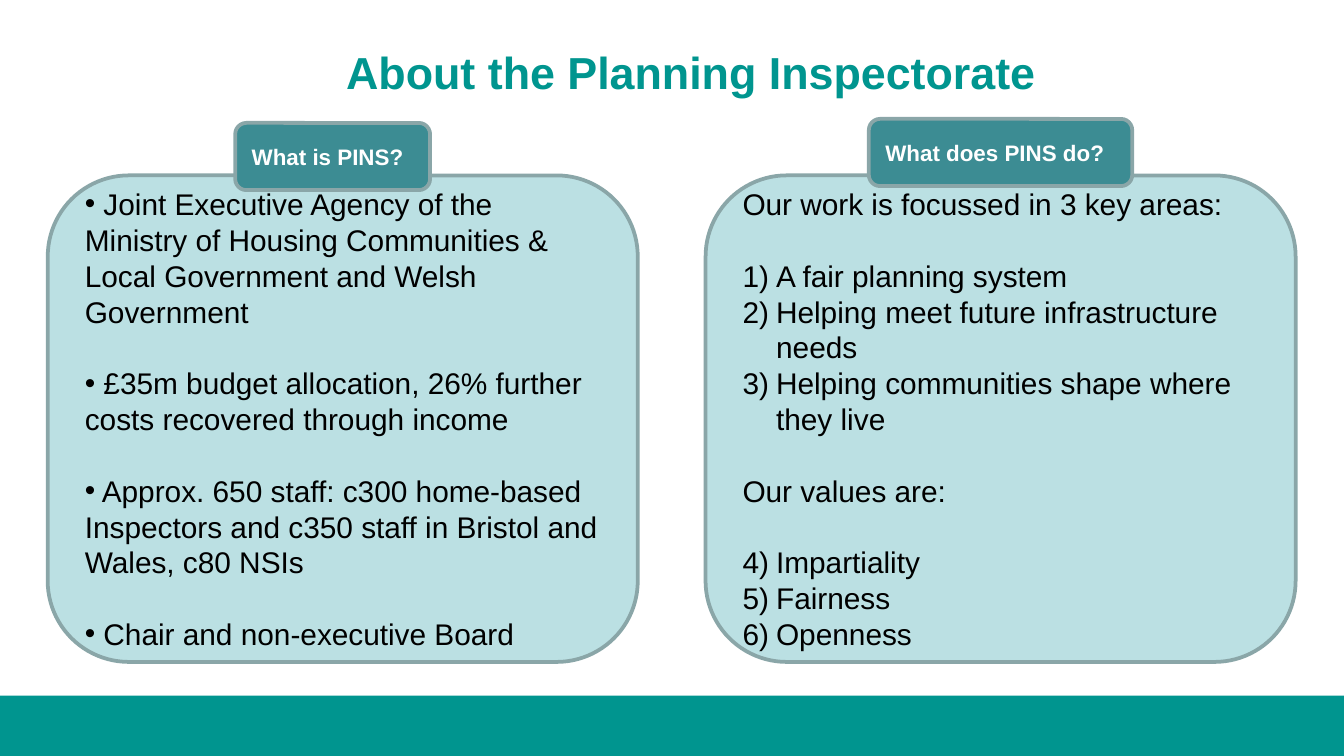
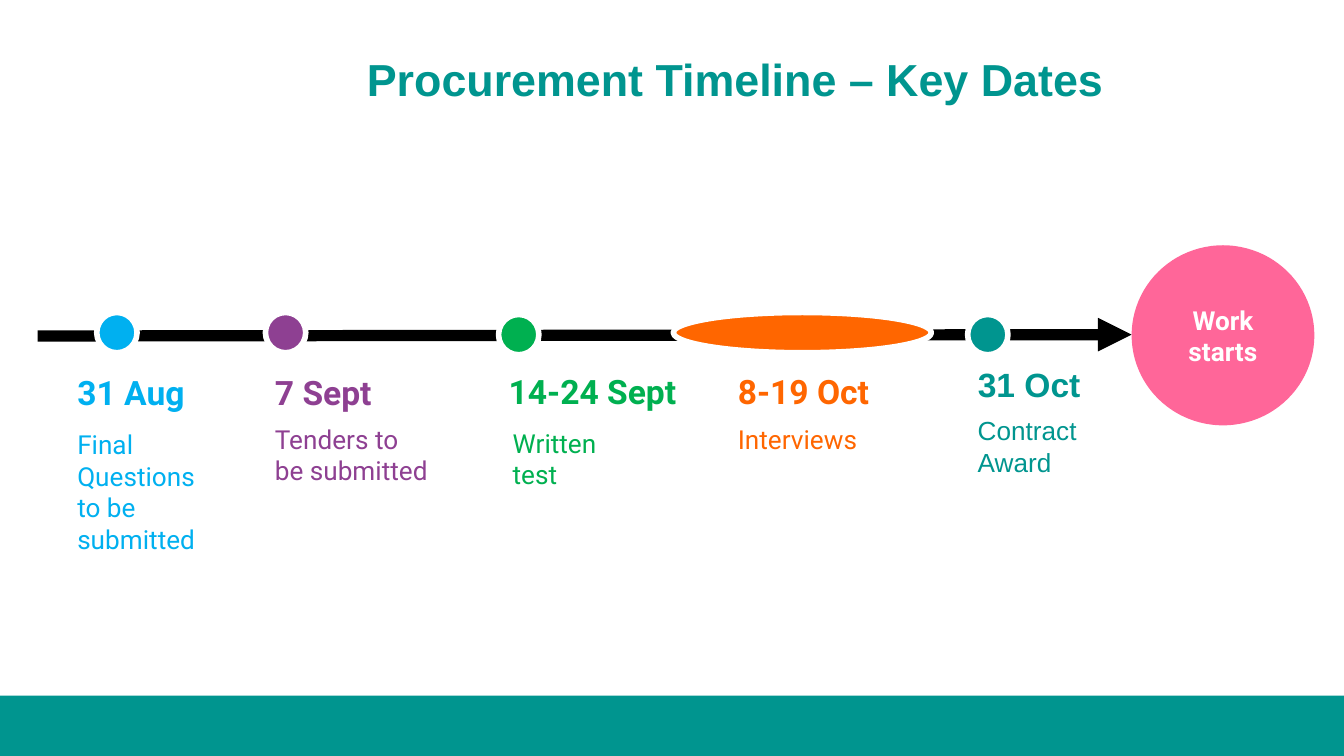
from dataclasses import dataclass
from typing import Optional

from lxml.etree import SubElement
from pptx import Presentation
from pptx.dml.color import RGBColor
from pptx.enum.shapes import MSO_CONNECTOR, MSO_SHAPE
from pptx.enum.text import MSO_ANCHOR, MSO_AUTO_SIZE, PP_ALIGN
from pptx.oxml.ns import qn
from pptx.util import Emu, Pt

PX = 4572  # 200 px to the inch
W, H = 2000, 1125
LINE = 1.2  # line height as a multiple of the text size
BODY_SIZE = 16

COLORS = {
    "teal": "00958F", "white": "FFFFFF", "black": "000000",
    "panel": "BBE0E3", "tag": "3C8C93", "edge": "8AA6A8",
    "blue": "00B0F0", "purple": "8E4092", "green": "00B050",
    "orange": "FF6600", "pink": "FF6699",
}


@dataclass(frozen=True)
class Box:
    x: int
    y: int
    w: int
    h: int

    def emu(self) -> tuple:
        return tuple(Emu(v * PX) for v in (self.x, self.y, self.w, self.h))


@dataclass(frozen=True)
class Item:
    text: str
    bullet: Optional[str] = None  # "dot" or "number"
    gap: bool = False
    start: int = 1


@dataclass(frozen=True)
class Milestone:
    color: str
    dot: Box
    date: str
    date_box: Box
    task: str
    task_box: Box
    font: str = "Roboto"


TITLE_1 = Box(348, 42, 1360, 128)
TITLE_2 = Box(526, 29, 1422, 186)
PANELS = [Box(x, 261, 878, 724) for x in (71, 1050)]
TAGS = [
    ("What is PINS?", Box(350, 183, 290, 100)),
    ("What does PINS do?", Box(1293, 177, 392, 100)),
]
ABOUT = [
    Item(" Joint Executive Agency of the Ministry of Housing Communities "
         "& Local Government and Welsh Government", "dot"),
    Item(" £35m budget allocation, 26% further costs recovered through income",
         "dot", gap=True),
    Item(" Approx. 650 staff: c300 home-based Inspectors and c350 staff in "
         "Bristol and Wales, c80 NSIs", "dot", gap=True),
    Item(" Chair and non-executive Board", "dot", gap=True),
]
WORK = [
    Item("Our work is focussed in 3 key areas:"),
    Item("A fair planning system", "number", gap=True),
    Item("Helping meet future infrastructure needs", "number"),
    Item("Helping communities shape where they live", "number"),
    Item("Our values are:", gap=True),
    Item("Impartiality", "number", gap=True, start=4),
    Item("Fairness", "number", start=4),
    Item("Openness", "number", start=4),
]
MILESTONES = [
    Milestone("blue", Box(144, 465, 60, 60), "31 Aug",
              Box(101, 546, 196, 76), "Final \nQuestions \nto be \nsubmitted",
              Box(101, 630, 354, 204)),
    Milestone("purple", Box(395, 465, 60, 60), "7 Sept",
              Box(395, 546, 182, 76), "Tenders to \nbe submitted",
              Box(395, 622, 354, 110)),
    Milestone("green", Box(742, 468, 60, 60), "14-24 Sept",
              Box(743, 544, 282, 76), "Written \ntest",
              Box(749, 628, 354, 110)),
    Milestone("orange", Box(1002, 465, 384, 60), "8-19 Oct",
              Box(1084, 544, 230, 76), "Interviews",
              Box(1084, 622, 354, 62)),
    Milestone("teal", Box(1440, 468, 60, 60), "31 Oct",
              Box(1441, 534, 184, 76), "Contract \nAward",
              Box(1441, 609, 386, 110), "Arial"),
]


def rgb(name: str) -> RGBColor:
    return RGBColor.from_string(COLORS[name])


def write(p, text: str, *, size: int, color: str, font: str = "Arial",
          bold: bool = False, align=PP_ALIGN.LEFT) -> None:
    """Put formatted text in a paragraph, with a line break at each newline."""
    p.alignment = align
    for i, line in enumerate(text.split("\n")):
        if i:
            p.add_line_break()
        r = p.add_run()
        r.text = line
        r.font.size, r.font.bold, r.font.name = Pt(size), bold, font
        r.font.color.rgb = rgb(color)


def set_frame(tf, margins: tuple = (20, 10), anchor=MSO_ANCHOR.MIDDLE,
              wrap: bool = True, auto_size=MSO_AUTO_SIZE.NONE) -> None:
    tf.margin_left = tf.margin_right = Emu(margins[0] * PX)
    tf.margin_top = tf.margin_bottom = Emu(margins[1] * PX)
    tf.vertical_anchor = anchor
    tf.word_wrap = wrap
    tf.auto_size = auto_size


def paint(s, fill: str, line: Optional[str] = None, width: int = 2) -> None:
    s.fill.solid()
    s.fill.fore_color.rgb = rgb(fill)
    if line:
        s.line.color.rgb = rgb(line)
        s.line.width = Pt(width)
    else:
        s.line.fill.background()


def add_shape(slide, kind, box: Box, fill: str, line: Optional[str] = None,
              width: int = 2):
    s = slide.shapes.add_shape(kind, *box.emu())
    s.shadow.inherit = False
    paint(s, fill, line, width)
    set_frame(s.text_frame)
    return s


def place(s, box: Box) -> None:
    s.left, s.top, s.width, s.height = box.emu()


def set_title(slide, text: str, box: Box, align) -> None:
    s = slide.shapes.title
    place(s, box)
    set_frame(s.text_frame)
    write(s.text_frame.paragraphs[0], text, size=24, color="teal", bold=True,
          align=align)


def set_bullet(p, item: Item) -> None:
    pPr = p._p.get_or_add_pPr()
    indent = 50 * PX if item.bullet == "number" else 0
    pPr.set("marL", str(indent))
    pPr.set("indent", str(-indent))
    if item.bullet == "dot":
        SubElement(pPr, qn("a:buFont")).set("typeface", "Arial")
        SubElement(pPr, qn("a:buChar")).set("char", "•")
    elif item.bullet == "number":
        num = SubElement(pPr, qn("a:buAutoNum"))
        num.set("type", "arabicParenR")
        if item.start > 1:
            num.set("startAt", str(item.start))
    else:
        SubElement(pPr, qn("a:buNone"))


def write_items(tf, items: list[Item]) -> None:
    set_frame(tf)
    height = Pt(BODY_SIZE * LINE)
    for i, item in enumerate(items):
        p = tf.paragraphs[0] if i == 0 else tf.add_paragraph()
        set_bullet(p, item)
        p.line_spacing = height
        p.space_before = height if item.gap else Pt(0)
        p.space_after = Pt(0)
        write(p, item.text, size=BODY_SIZE, color="black")


def round_corners(s) -> None:
    """Give a placeholder the outline of a rounded rectangle."""
    geom = SubElement(s.element.spPr, qn("a:prstGeom"))
    geom.set("prst", "roundRect")
    SubElement(geom, qn("a:avLst"))


def add_label(slide, text: str, box: Box, *, wrap: bool, size: int,
              **fmt) -> None:
    tf = slide.shapes.add_textbox(*box.emu()).text_frame
    set_frame(tf, (14, 8), MSO_ANCHOR.TOP, wrap,
              MSO_AUTO_SIZE.SHAPE_TO_FIT_TEXT)
    p = tf.paragraphs[0]
    p.line_spacing = Pt(size * LINE)
    write(p, text, size=size, **fmt)


def add_arrow(slide, start: tuple, end: tuple, width: int) -> None:
    points = [Emu(v * PX) for v in (*start, *end)]
    c = slide.shapes.add_connector(MSO_CONNECTOR.STRAIGHT, *points)
    c.line.color.rgb = rgb("black")
    c.line.width = Pt(width)
    SubElement(c.line._get_or_add_ln(), qn("a:tailEnd")).set("type", "triangle")
    SubElement(c.element.spPr, qn("a:effectLst"))


def add_master_band(prs, slide) -> None:
    """Draw the footer band, then move it to the master so all slides share it."""
    band = add_shape(slide, MSO_SHAPE.RECTANGLE, Box(0, 1035, W, H - 1035),
                     "teal")
    prs.slide_master.shapes.element.insert(2, band.element)


def build_about(prs) -> None:
    slide = prs.slides.add_slide(prs.slide_layouts[1])
    add_master_band(prs, slide)
    set_title(slide, "About the Planning Inspectorate", TITLE_1,
              PP_ALIGN.CENTER)
    body = slide.placeholders[1]
    place(body, PANELS[0])
    round_corners(body)
    paint(body, "panel", "edge")
    write_items(body.text_frame, ABOUT)

    work = add_shape(slide, MSO_SHAPE.ROUNDED_RECTANGLE, PANELS[1], "panel",
                     "edge")
    write_items(work.text_frame, WORK)
    for text, box in TAGS:
        s = add_shape(slide, MSO_SHAPE.ROUNDED_RECTANGLE, box, "tag", "edge")
        write(s.text_frame.paragraphs[0], text, size=12, color="white",
              bold=True)


def build_timeline(prs) -> None:
    slide = prs.slides.add_slide(prs.slide_layouts[5])
    set_title(slide, "Procurement Timeline – Key Dates", TITLE_2,
              PP_ALIGN.LEFT)
    slide.shapes.title.text_frame.paragraphs[0].line_spacing = 0.9
    add_arrow(slide, (56, 500), (1684, 498), 6)
    for m in MILESTONES:
        add_shape(slide, MSO_SHAPE.OVAL, m.dot, m.color, "white", 3)
        add_label(slide, m.date, m.date_box, wrap=False, size=18,
                  color=m.color, font=m.font, bold=True)
        add_label(slide, m.task, m.task_box, wrap=True, size=14,
                  color=m.color, font=m.font)
    start = add_shape(slide, MSO_SHAPE.OVAL, Box(1684, 365, 272, 268), "pink")
    write(start.text_frame.paragraphs[0], "Work starts", size=14,
          color="white", font="Roboto", bold=True, align=PP_ALIGN.CENTER)


def main() -> None:
    prs = Presentation()
    prs.slide_width, prs.slide_height = Emu(W * PX), Emu(H * PX)
    build_about(prs)
    build_timeline(prs)
    prs.save("out.pptx")


if __name__ == "__main__":
    main()
